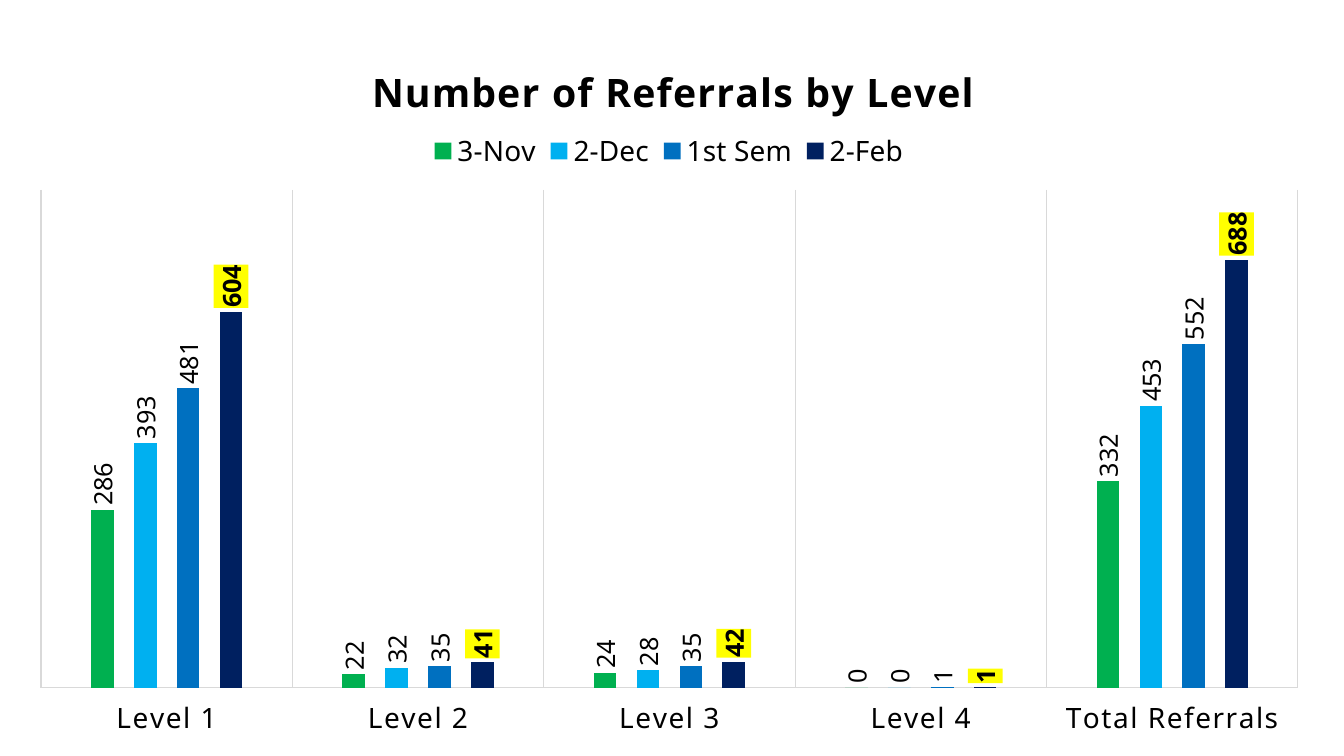
from dataclasses import dataclass

from lxml.etree import SubElement
from pptx import Presentation
from pptx.chart.data import CategoryChartData
from pptx.dml.color import RGBColor
from pptx.enum.chart import XL_CHART_TYPE as ChartType
from pptx.enum.chart import XL_LABEL_POSITION as LabelPosition
from pptx.enum.chart import XL_LEGEND_POSITION as LegendPosition
from pptx.enum.chart import XL_TICK_LABEL_POSITION as TickLabelPosition
from pptx.enum.chart import XL_TICK_MARK as TickMark
from pptx.oxml.ns import qn
from pptx.util import Emu, Pt

EMU_PER_PX = 914400 / 100.8


def px(length):
    return Emu(round(length * EMU_PER_PX))


@dataclass
class Theme:
    font: str = "Noto Sans"
    text: str = "000000"
    rule: str = "D9D9D9"
    highlight: str = "FFFF00"
    series: tuple = ("00B050", "00B0F0", "0070C0", "002060")
    title_size: int = 28
    axis_size: int = 20
    label_size: int = 18
    letter_spacing: int = 100
    rule_width: float = 0.75


class ReferralPage:
    """Holds the theme, the current slide and the frame of its chart."""

    def __init__(self, deck, theme, frame):
        self.theme = theme
        self.frame = frame
        self.slide = deck.slides.add_slide(deck.slide_layouts[6])

    def style(self, font, size, bold=False):
        font.name = self.theme.font
        font.size = Pt(size)
        font.bold = bold
        font.color.rgb = RGBColor.from_string(self.theme.text)

    def space_letters(self, element):
        for properties in element.iter(qn("a:defRPr")):
            properties.set("spc", str(self.theme.letter_spacing))

    def rule(self, line):
        line.color.rgb = RGBColor.from_string(self.theme.rule)
        line.width = Pt(self.theme.rule_width)

    def place(self, element, left, top, width=None, height=None, inner=False):
        """Pin a chart part at a place on the slide, in px."""
        frame_left, frame_top, frame_width, frame_height = self.frame
        for old in element.findall(qn("c:layout")):
            element.remove(old)
        layout = SubElement(element, qn("c:layout"))
        manual = SubElement(layout, qn("c:manualLayout"))
        settings = [("xMode", "edge"), ("yMode", "edge"),
                    ("x", (left - frame_left) / frame_width),
                    ("y", (top - frame_top) / frame_height)]
        if inner:
            settings.insert(0, ("layoutTarget", "inner"))
        if width:
            settings += [("w", width / frame_width), ("h", height / frame_height)]
        for name, value in settings:
            SubElement(manual, qn(f"c:{name}")).set("val", str(value))
        overlay = element.find(qn("c:overlay"))
        if overlay is None:
            element.insert(0, layout)
        else:
            overlay.addprevious(layout)

    def columns(self, categories, series):
        data = CategoryChartData(number_format="0")
        data.categories = categories
        for name, values in series.items():
            data.add_series(name, values)
        chart = self.slide.shapes.add_chart(
            ChartType.COLUMN_CLUSTERED, *map(px, self.frame), data).chart
        self.style(chart.font, 10)
        plot = chart.plots[0]
        plot.gap_width = 444
        plot.overlap = -90
        plot.vary_by_categories = False
        for column, color in zip(plot.series, self.theme.series):
            column.invert_if_negative = False
            column.format.fill.solid()
            column.format.fill.fore_color.rgb = RGBColor.from_string(color)
        return chart

    def title(self, chart, text, left, top):
        chart.has_title = True
        para = chart.chart_title.text_frame.paragraphs[0]
        para.text = text
        self.style(para.font, self.theme.title_size, bold=True)
        title = chart.chart_title._element
        self.space_letters(title)
        self.place(title, left, top)

    def legend(self, chart, *area):
        chart.has_legend = True
        legend = chart.legend
        legend.position = LegendPosition.TOP
        legend.include_in_layout = False
        self.style(legend.font, self.theme.axis_size)
        self.place(legend._element, *area)

    def axes(self, chart, maximum):
        levels = chart.category_axis
        levels.major_tick_mark = levels.minor_tick_mark = TickMark.NONE
        levels.tick_label_position = TickLabelPosition.LOW
        levels.has_major_gridlines = True
        self.rule(levels.major_gridlines.format.line)
        self.rule(levels.format.line)
        self.style(levels.tick_labels.font, self.theme.axis_size)
        self.space_letters(levels._element)
        counts = chart.value_axis
        counts.minimum_scale = 0
        counts.maximum_scale = maximum
        counts.has_major_gridlines = False
        counts.visible = False

    def labels(self, column, latest):
        labels = column.data_labels
        labels.show_value = True
        labels.position = LabelPosition.OUTSIDE_END
        labels.number_format = "0"
        labels.number_format_is_linked = False
        self.style(labels.font, self.theme.label_size, bold=latest)
        text = labels._element.find(qn("c:txPr"))
        body = text.find(qn("a:bodyPr"))
        body.set("rot", "-5400000")
        body.set("vert", "horz")
        if latest:
            shape = SubElement(labels._element, qn("c:spPr"))
            fill = SubElement(shape, qn("a:solidFill"))
            SubElement(fill, qn("a:srgbClr")).set("val", self.theme.highlight)
            text.addprevious(shape)


def main():
    deck = Presentation()
    deck.slide_width, deck.slide_height = px(1344), px(756)
    page = ReferralPage(deck, Theme(), frame=(15, 21, 1308, 725))

    # Referral counts at each date
    levels = [f"Level {number}" for number in range(1, 5)] + ["Total Referrals"]
    referrals = {
        "3-Nov": (286, 22, 24, 0, 332),
        "2-Dec": (393, 32, 28, 0, 453),
        "1st Sem": (481, 35, 35, 1, 552),
        "2-Feb": (604, 41, 42, 1, 688),
    }
    chart = page.columns(levels, referrals)

    # Title, legend, axes and plot area
    page.title(chart, "Number of Referrals by Level", 365, 54)
    page.legend(chart, 420, 130, 498, 42)
    page.axes(chart, maximum=800)
    page.place(chart.plots[0]._element.getparent(), 41, 190, 1257, 498, inner=True)

    # Upright value labels, the latest date highlighted
    columns = list(chart.plots[0].series)
    for column in columns:
        page.labels(column, latest=column.name == columns[-1].name)

    deck.save("out.pptx")


if __name__ == "__main__":
    main()
